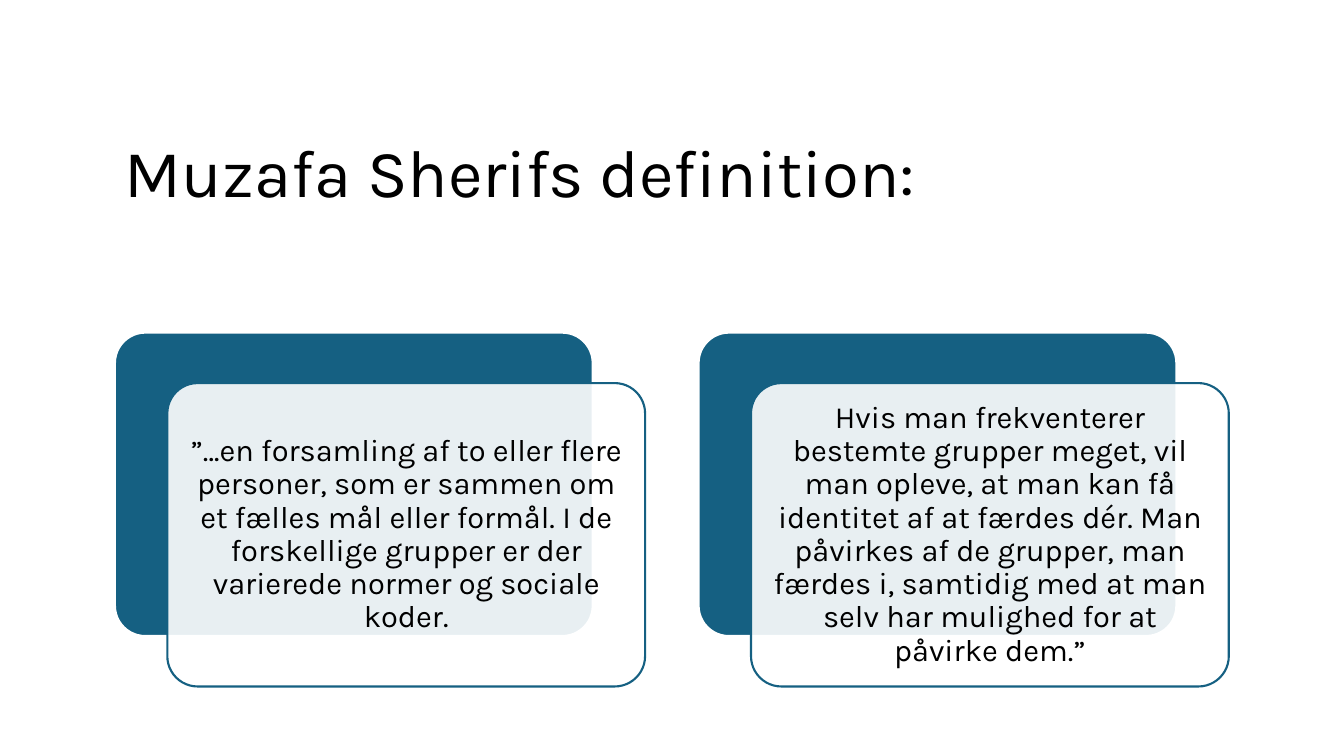
from dataclasses import dataclass

from lxml.etree import SubElement
from pptx import Presentation
from pptx.dml.color import RGBColor as RGB
from pptx.enum.shapes import MSO_SHAPE as Shape
from pptx.enum.text import MSO_ANCHOR as Anchor, PP_ALIGN as Align
from pptx.oxml.ns import qn
from pptx.util import Inches, Pt


@dataclass(frozen=True)
class Theme:
    font: str = "Karla"
    ink: RGB = RGB(0x00, 0x00, 0x00)
    paper: RGB = RGB(0xFF, 0xFF, 0xFF)
    accent: RGB = RGB(0x15, 0x60, 0x82)
    title_size: int = 48
    body_size: int = 22
    line_width: float = 1.5
    line_spacing: float = 0.9
    corner: float = 0.1
    veil_alpha: int = 90


class Deck:
    """Draws on the current slide; lengths are percent of its width and height."""

    def __init__(self, theme):
        self.theme = theme
        self.prs = Presentation()
        self.prs.slide_width, self.prs.slide_height = Inches(13.333), Inches(7.5)
        self.s = None

    def add_slide(self):
        self.s = self.prs.slides.add_slide(self.prs.slide_layouts[6])

    def box(self, x, y, w, h):
        """Turn percent shares into slide lengths."""
        col, row = self.prs.slide_width / 100, self.prs.slide_height / 100
        return [round(v) for v in (x * col, y * row, w * col, h * row)]

    def text(self, words, area, size, align=Align.LEFT):
        tf = self.s.shapes.add_textbox(*self.box(*area)).text_frame
        p = tf.paragraphs[0]
        r = p.add_run()
        r.text = words
        r.font.color.rgb = self.theme.ink
        formats = (
            (tf, {"word_wrap": True, "vertical_anchor": Anchor.MIDDLE}),
            (p, {"alignment": align, "line_spacing": self.theme.line_spacing}),
            (r.font, {"name": self.theme.font, "size": Pt(size)}),
        )
        for target, values in formats:
            for name, value in values.items():
                setattr(target, name, value)

    def panel(self, area, fill, line, alpha=100):
        sp = self.s.shapes.add_shape(Shape.ROUNDED_RECTANGLE, *self.box(*area))
        sp.adjustments[0] = self.theme.corner
        sp.shadow.inherit = False
        sp.fill.solid()
        sp.fill.fore_color.rgb = fill
        sp.line.color.rgb = line
        sp.line.width = Pt(self.theme.line_width)
        if alpha < 100:
            color = sp.fill._xPr.find(qn("a:solidFill"))[0]
            SubElement(color, qn("a:alpha"), val=str(alpha * 1000))

    def card(self, words, x, y, w, h):
        """Accent panel with a translucent, offset panel that carries the text."""
        t = self.theme
        dx, dy = 3.9, 6.67
        pad_x, pad_y = 0.68, 1.2
        front_x, front_y = x + dx, y + dy
        self.panel((x, y, w, h), t.accent, t.paper)
        self.panel((front_x, front_y, w, h), t.paper, t.accent, t.veil_alpha)
        inner = (front_x + pad_x, front_y + pad_y, w - 2 * pad_x, h - 2 * pad_y)
        self.text(words, inner, t.body_size, Align.CENTER)


QUOTES = (
    "”…en forsamling af to eller flere personer, som er sammen om et fælles mål "
    "eller formål. I de forskellige grupper er der varierede normer og sociale koder.",
    "Hvis man frekventerer bestemte grupper meget, vil man opleve, at man kan få "
    "identitet af at færdes dér. Man påvirkes af de grupper, man færdes i, samtidig "
    "med at man selv har mulighed for at påvirke dem.”",
)


def main():
    deck = Deck(Theme())
    deck.add_slide()
    left, step = 8.55, 43.43
    deck.text("Muzafa Sherifs definition:", (left, 11.87, 83.5, 22.67),
              deck.theme.title_size)
    for i, quote in enumerate(QUOTES):
        deck.card(quote, left + i * step, 44, 35.55, 40.13)
    deck.prs.save("out.pptx")


if __name__ == "__main__":
    main()
